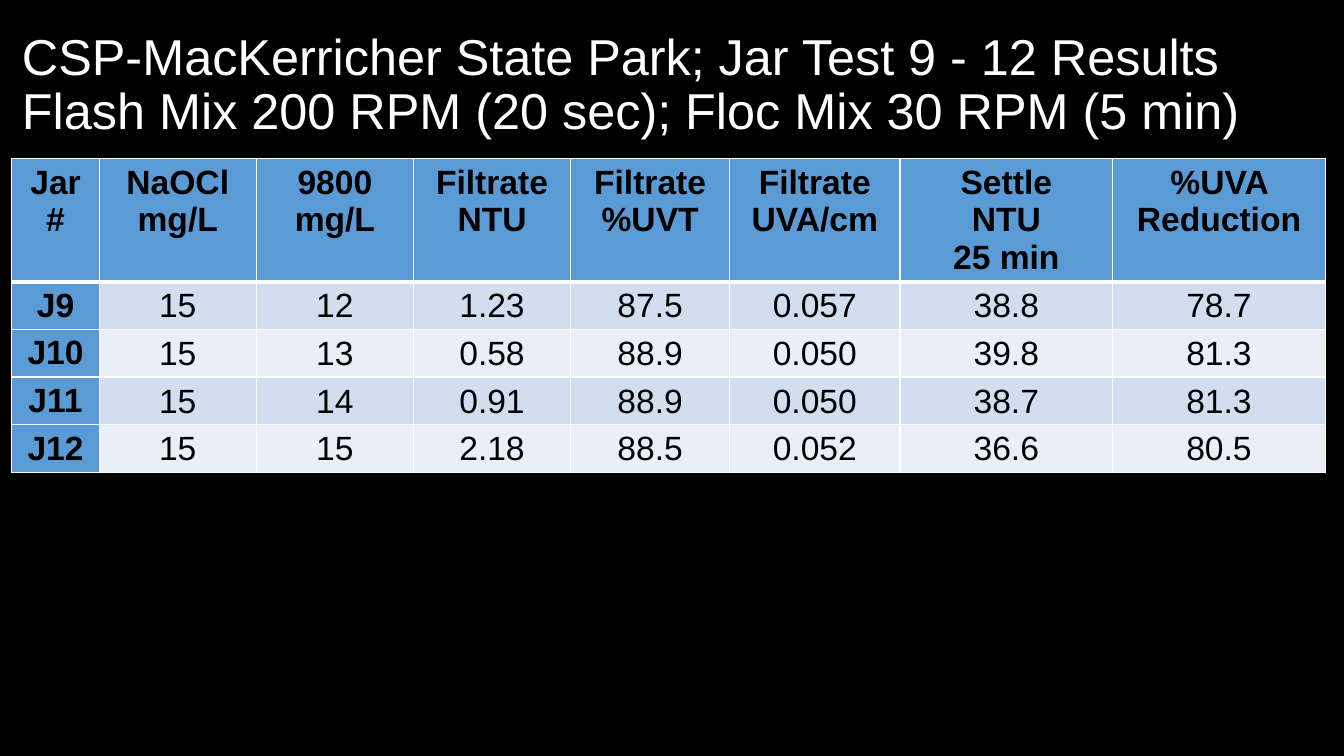
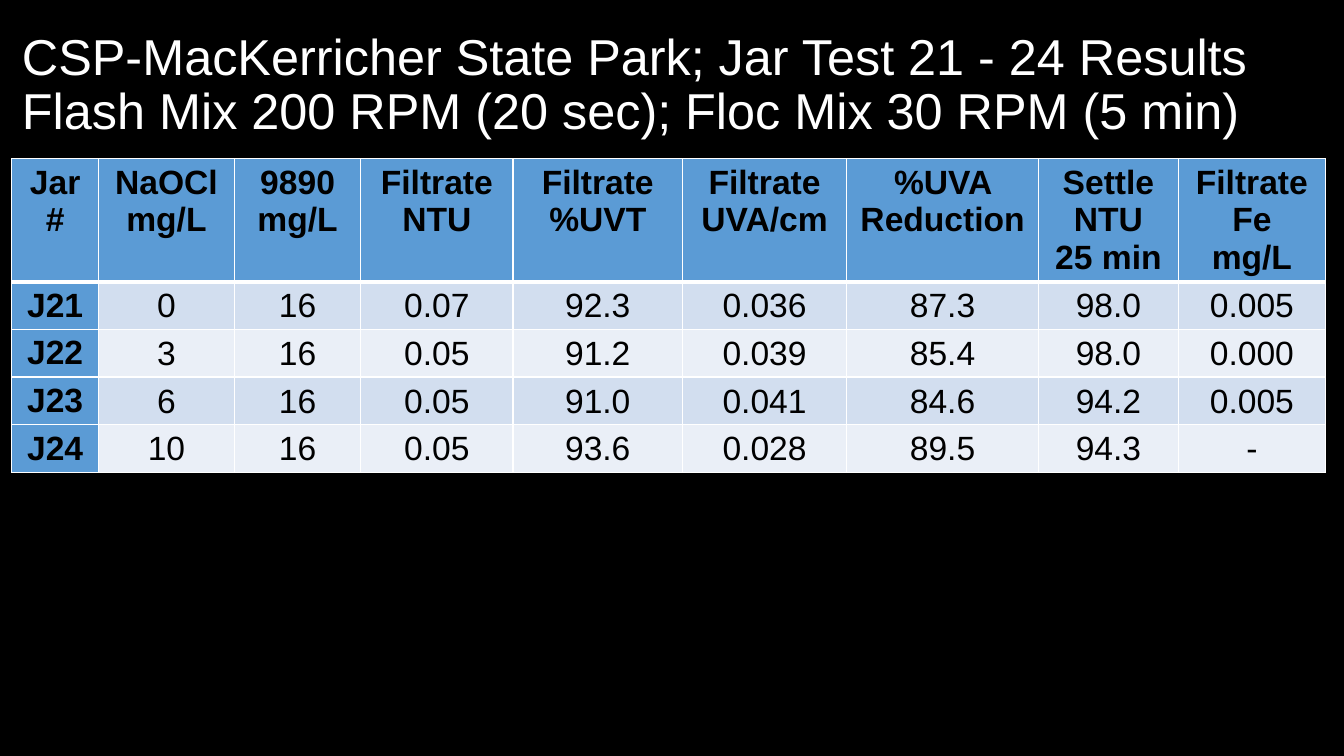
from dataclasses import dataclass

from lxml import etree
from pptx import Presentation
from pptx.dml.color import RGBColor
from pptx.enum.text import MSO_ANCHOR, MSO_AUTO_SIZE, PP_ALIGN
from pptx.oxml.ns import qn
from pptx.util import Cm, Pt

LEFT, CENTER = PP_ALIGN.LEFT, PP_ALIGN.CENTER
TOP, MIDDLE = MSO_ANCHOR.TOP, MSO_ANCHOR.MIDDLE
FIXED = MSO_AUTO_SIZE.NONE

PARK = "CSP-MacKerricher State Park"
MIX = "Flash Mix 200 RPM (20 sec); Floc Mix 30 RPM (5 min)"

TESTS = [
    {
        "jars": "9 - 12",
        "heads": ["Jar\n#", "NaOCl\nmg/L", "9800\nmg/L", "Filtrate\nNTU",
                  "Filtrate\n%UVT", "Filtrate\nUVA/cm",
                  "Settle\nNTU\n25 min", "%UVA Reduction"],
        "cols": [2.2, 3.96, 3.96, 3.96, 4.01, 4.29, 5.36, 5.36],
        "rows": [
            ["J9", "15", "12", "1.23", "87.5", "0.057", "38.8", "78.7"],
            ["J10", "15", "13", "0.58", "88.9", "0.050", "39.8", "81.3"],
            ["J11", "15", "14", "0.91", "88.9", "0.050", "38.7", "81.3"],
            ["J12", "15", "15", "2.18", "88.5", "0.052", "36.6", "80.5"],
        ],
    },
    {
        "jars": "21 - 24",
        "heads": ["Jar\n#", "NaOCl\nmg/L", "9890\nmg/L", "Filtrate\nNTU",
                  "Filtrate\n%UVT", "Filtrate\nUVA/cm", "%UVA Reduction",
                  "Settle\nNTU\n25 min", "Filtrate\nFe mg/L"],
        "cols": [2.18, 3.43, 3.18, 3.84, 4.27, 4.14, 4.83, 3.53, 3.7],
        "rows": [
            ["J21", "0", "16", "0.07", "92.3", "0.036", "87.3", "98.0", "0.005"],
            ["J22", "3", "16", "0.05", "91.2", "0.039", "85.4", "98.0", "0.000"],
            ["J23", "6", "16", "0.05", "91.0", "0.041", "84.6", "94.2", "0.005"],
            ["J24", "10", "16", "0.05", "93.6", "0.028", "89.5", "94.3", "-"],
        ],
    },
]


@dataclass(frozen=True)
class Theme:
    font: str = "Arial"
    back: str = "000000"
    ink: str = "000000"
    light: str = "FFFFFF"
    head: str = "5B9BD5"
    bands: tuple = ("D2DEEF", "EAEFF7")
    title: int = 36
    body: int = 24
    thin: int = 1
    thick: int = 3


THEME = Theme()
EDGE = Cm(0.3)
WIDTH = Cm(33.1)
TITLE_TOP, TITLE_HIGH = Cm(0.33), Cm(3.68)
TABLE_TOP = Cm(4)
HEAD_HIGH, ROW_HIGH = Cm(3.1), Cm(1.2)
PAD = Cm(0.03)


def paint(fill, color):
    fill.solid()
    fill.fore_color.rgb = RGBColor.from_string(color)


def style(frame, size, color, align, bold=False):
    for para in frame.paragraphs:
        para.alignment = align
        para.font.name = THEME.font
        para.font.size = Pt(size)
        para.font.bold = bold
        para.font.color.rgb = RGBColor.from_string(color)


def frame_cell(cell, row):
    props = cell._tc.get_or_add_tcPr()
    heavy = {0: "B", 1: "T"}.get(row)
    for side in "LRTB":
        size = THEME.thick if side == heavy else THEME.thin
        line = etree.SubElement(props, qn(f"a:ln{side}"), w=str(Pt(size)))
        fill = etree.SubElement(line, qn("a:solidFill"))
        etree.SubElement(fill, qn("a:srgbClr"), val=THEME.light)


def fill_cell(cell, text, row, col):
    label = row == 0 or col == 0
    cell.text = text
    frame_cell(cell, row)
    paint(cell.fill, THEME.head if label else THEME.bands[(row - 1) % 2])
    cell.vertical_anchor = TOP if label else MIDDLE
    if not label:
        cell.margin_left = cell.margin_right = cell.margin_top = PAD
        cell.margin_bottom = 0
    style(cell.text_frame, THEME.body, THEME.ink, CENTER, label)


def add_title(slide, jars):
    title = slide.shapes.title
    title.left, title.top = EDGE, TITLE_TOP
    title.width, title.height = WIDTH, TITLE_HIGH
    frame = title.text_frame
    frame.text = f"{PARK}; Jar Test {jars} Results\v{MIX}"
    frame.auto_size = FIXED
    frame.word_wrap = True
    frame.vertical_anchor = MIDDLE
    frame.paragraphs[0].line_spacing = 0.9
    style(frame, THEME.title, THEME.light, LEFT)


def add_grid(slide, test):
    rows = [test["heads"], *test["rows"]]
    highs = [HEAD_HIGH] + [ROW_HIGH] * len(test["rows"])
    table = slide.shapes.add_table(
        len(rows), len(test["cols"]), EDGE, TABLE_TOP, WIDTH, sum(highs)).table
    table.first_col = True
    for col, wide in zip(table.columns, test["cols"]):
        col.width = Cm(wide)
    for row, high in zip(table.rows, highs):
        row.height = high
    for r, texts in enumerate(rows):
        for c, text in enumerate(texts):
            fill_cell(table.cell(r, c), text, r, c)


def main():
    deck = Presentation()
    deck.slide_width, deck.slide_height = Cm(33.87), Cm(19.05)
    paint(deck.slide_master.background.fill, THEME.back)
    for test in TESTS:
        slide = deck.slides.add_slide(deck.slide_layouts.get_by_name("Title Only"))
        add_title(slide, test["jars"])
        add_grid(slide, test)
    deck.save("out.pptx")


if __name__ == "__main__":
    main()
